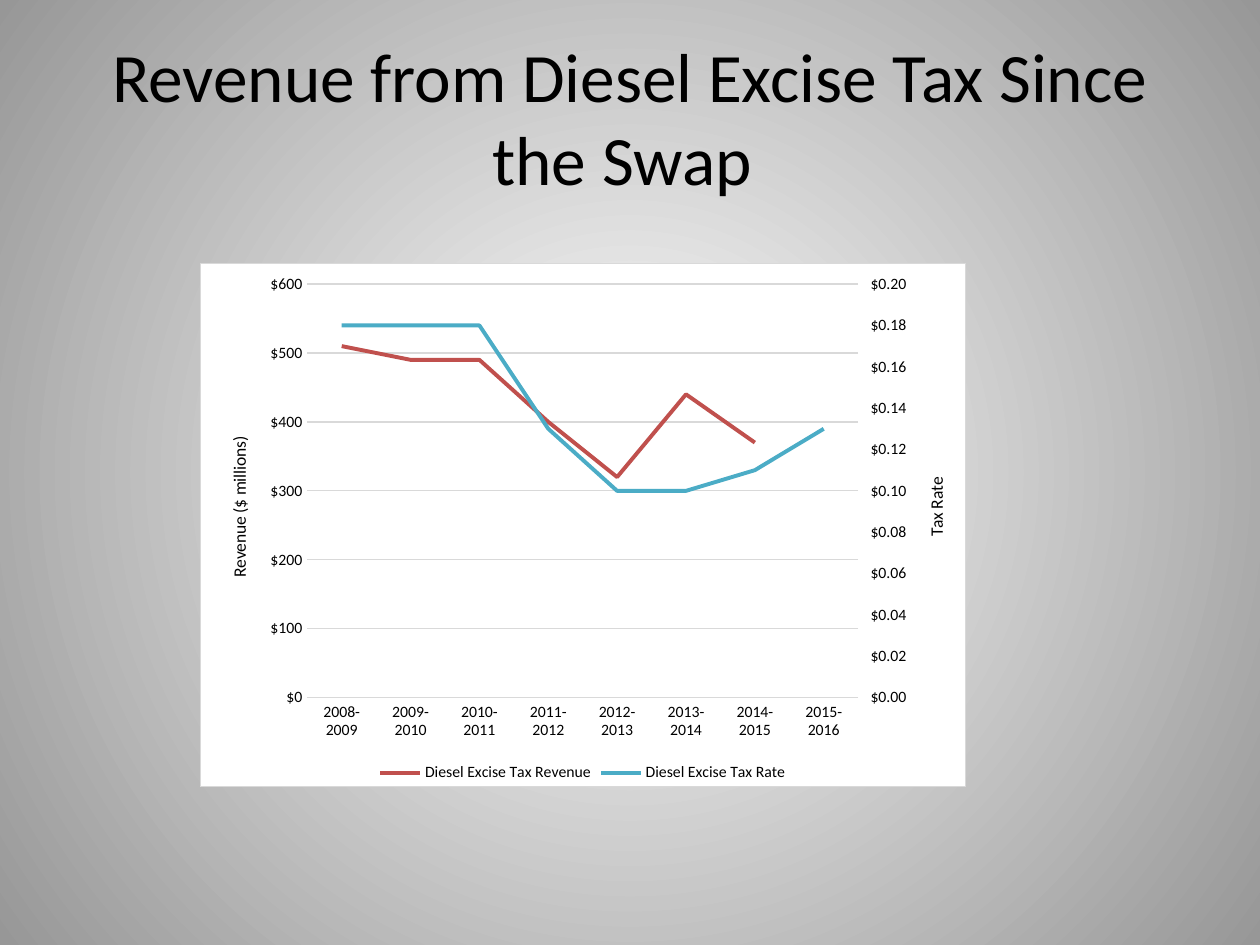
from copy import deepcopy

from pptx import Presentation
from pptx.chart import axis as ax
from pptx.chart import data as cd
from pptx.dml.color import RGBColor
from pptx.enum import chart as ch
from pptx.enum import text as tx
from pptx.oxml import parse_xml
from pptx.oxml.ns import nsdecls, qn
from pptx.util import Pt

BLACK = RGBColor(0, 0, 0)
WHITE = RGBColor(255, 255, 255)
EDGE = RGBColor(0x97, 0x97, 0x97)
GRID = RGBColor(0xD9, 0xD9, 0xD9)
RED = RGBColor(0xC0, 0x50, 0x4D)
TEAL = RGBColor(0x4B, 0xAC, 0xC6)
FONT = "Calibri"


def style(font, size):
    """Set the shared face and colour at a given size."""
    font.name, font.size, font.bold = FONT, Pt(size), False
    font.color.rgb = BLACK


def write(frame, words, size=10, align=tx.PP_ALIGN.CENTER):
    """Write one formatted paragraph in a text frame."""
    frame.text = words
    para = frame.paragraphs[0]
    para.alignment = align
    style(para.runs[0].font, size)


def stroke(line, color, width):
    """Give a line a solid colour and width."""
    line.color.rgb = color
    line.width = Pt(width)


def shade(slide):
    """Fill the background with a round gradient."""
    fill = slide.background.fill
    fill.gradient()
    for stop, color, pos in zip(fill.gradient_stops, (WHITE, EDGE), (0, 1)):
        stop.color.rgb, stop.position = color, pos
    grad = slide.element.find(".//" + qn("a:gradFill"))
    grad.remove(grad.find(qn("a:lin")))
    grad.append(parse_xml(
        f'<a:path {nsdecls("a")} path="circle"><a:fillToRect l="50000" '
        't="50000" r="50000" b="50000"/></a:path>'))


def frame(chart):
    """Place the plot area and fill and outline the chart."""
    plot = chart._chartSpace.chart.plotArea
    for old in plot.findall(qn("c:layout")):
        plot.remove(old)
    spots = "".join(f'<c:{k} val="{v}"/>' for k, v in (
        ("layoutTarget", "inner"), ("xMode", "edge"), ("yMode", "edge"),
        ("x", 0.14), ("y", 0.04), ("w", 0.72), ("h", 0.79)))
    plot.insert(0, parse_xml(
        f'<c:layout {nsdecls("c")}><c:manualLayout>{spots}'
        '</c:manualLayout></c:layout>'))
    chart._chartSpace.chart.addnext(parse_xml(
        f'<c:spPr {nsdecls("c", "a")}><a:solidFill><a:srgbClr val="{WHITE}"/>'
        f'</a:solidFill><a:ln w="{Pt(0.75)}"><a:solidFill>'
        f'<a:srgbClr val="{GRID}"/></a:solidFill></a:ln></c:spPr>'))


def split(chart):
    """Move the second series to a right axis and return that axis."""
    plot = chart._chartSpace.chart.plotArea
    left = plot.find(qn("c:lineChart"))
    right = deepcopy(left)
    left.remove(left.findall(qn("c:ser"))[1])
    right.remove(right.findall(qn("c:ser"))[0])
    left.addnext(right)
    cat = deepcopy(plot.find(qn("c:catAx")))
    val = deepcopy(plot.find(qn("c:valAx")))
    plot.find(qn("c:valAx")).addnext(val)
    val.addnext(cat)
    for node, num in zip(right.findall(qn("c:axId")), ("10", "20")):
        node.set("val", num)
    for node, own, other in ((cat, "10", "20"), (val, "20", "10")):
        node.find(qn("c:axId")).set("val", own)
        node.find(qn("c:crossAx")).set("val", other)
    val.find(qn("c:axPos")).set("val", "r")
    val.find(qn("c:crosses")).set("val", "max")
    ax.CategoryAxis(cat).visible = False
    return ax.ValueAxis(val)


def scale(axis, words, top, step, form, tick):
    """Format a value axis with its title, range and labels."""
    axis.minimum_scale, axis.maximum_scale, axis.major_unit = 0, top, step
    axis.major_tick_mark = tick
    axis.format.line.fill.background()
    style(axis.tick_labels.font, 9)
    axis.tick_labels.number_format = form
    axis.tick_labels.number_format_is_linked = False
    write(axis.axis_title.text_frame, words)


def graph(slide):
    """Add the line chart of revenue and tax rate."""
    data = cd.CategoryChartData()
    data.categories = [f"{y}-{y + 1}" for y in range(2008, 2016)]
    data.add_series("Diesel Excise Tax Revenue",
                    (510, 490, 490, 400, 320, 440, 370, None))
    data.add_series("Diesel Excise Tax Rate",
                    (0.18, 0.18, 0.18, 0.13, 0.1, 0.1, 0.11, 0.13))
    chart = slide.shapes.add_chart(
        ch.XL_CHART_TYPE.LINE, Pt(114), Pt(150), Pt(438), Pt(300), data).chart
    chart.has_title = False
    style(chart.font, 10)
    chart.has_legend = True
    chart.legend.position = ch.XL_LEGEND_POSITION.BOTTOM
    chart.legend.include_in_layout = False
    style(chart.legend.font, 9)
    for line, color in zip(chart.plots[0].series, (RED, TEAL)):
        line.smooth = False
        stroke(line.format.line, color, 2.25)
    base, left = chart.category_axis, chart.value_axis
    base.major_tick_mark = ch.XL_TICK_MARK.NONE
    stroke(base.format.line, GRID, 0.75)
    style(base.tick_labels.font, 9)
    frame(chart)
    right = split(chart)
    right.has_major_gridlines = False
    left.has_major_gridlines = True
    stroke(left.major_gridlines.format.line, GRID, 0.75)
    scale(left, "Revenue ($ millions)", 600, 100, '"$"#,##0',
          ch.XL_TICK_MARK.NONE)
    scale(right, "Tax Rate", 0.2, 0.02, '"$"#,##0.00',
          ch.XL_TICK_MARK.OUTSIDE)


def head(slide):
    """Place and write the slide title."""
    box = slide.shapes.title
    box.left, box.top, box.width, box.height = Pt(36), Pt(21.6), Pt(648), Pt(90)
    box.text_frame.auto_size = tx.MSO_AUTO_SIZE.NONE
    box.text_frame.vertical_anchor = tx.MSO_ANCHOR.MIDDLE
    write(box.text_frame, "Revenue from Diesel Excise Tax Since the Swap ",
          size=39.6)


def main():
    """Build and save the slide."""
    deck = Presentation()
    deck.slide_width, deck.slide_height = Pt(720), Pt(540)
    slide = deck.slides.add_slide(deck.slide_layouts[5])
    shade(slide)
    graph(slide)
    head(slide)
    deck.save("out.pptx")


if __name__ == "__main__":
    main()
